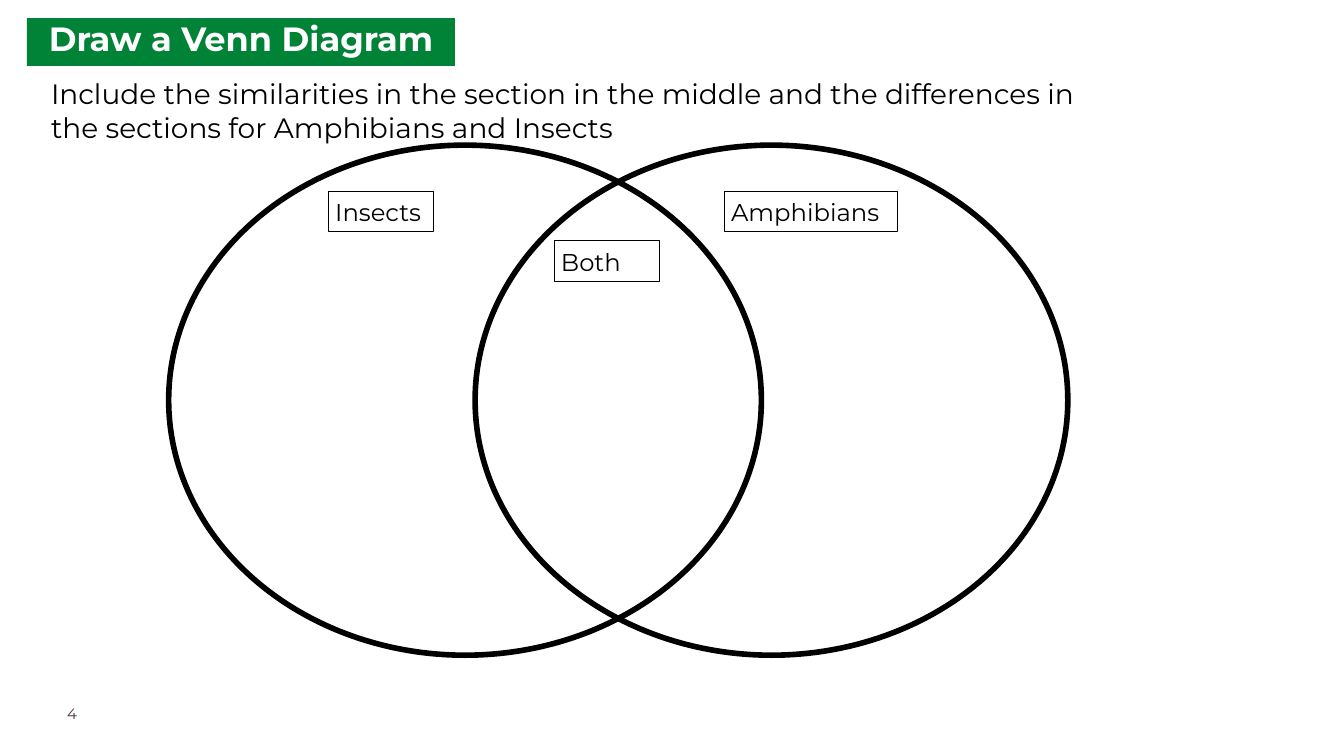
"""Build a Venn diagram worksheet slide comparing insects and amphibians."""
from lxml.etree import SubElement
from pptx import Presentation
from pptx.dml.color import RGBColor
from pptx.enum.shapes import MSO_SHAPE
from pptx.enum.text import MSO_ANCHOR, MSO_AUTO_SIZE, PP_ALIGN
from pptx.oxml.ns import qn
from pptx.util import Inches, Pt

COLORS = {"green": "008237", "white": "FFFFFF", "black": "000000", "plum": "4B3241"}

deck = Presentation()
deck.slide_width, deck.slide_height = Inches(20), Inches(11.25)
column = deck.slide_width / 20
row = deck.slide_height / 11.25


def place(item, left, top, width, height):
    item.left, item.width = int(left * column), int(width * column)
    item.top, item.height = int(top * row), int(height * row)
    return item


def write(item, text, size, color="black", bold=False, align=PP_ALIGN.LEFT, inset=0.1):
    frame = item.text_frame
    frame.word_wrap = True
    frame.auto_size = MSO_AUTO_SIZE.NONE
    frame.vertical_anchor = MSO_ANCHOR.TOP
    frame.margin_left = frame.margin_right = Inches(inset)
    frame.margin_top = frame.margin_bottom = Inches(inset)
    frame.text = text
    paragraph = frame.paragraphs[0]
    properties = paragraph._p.get_or_add_pPr()
    properties.set("marL", "0")
    properties.set("indent", "0")
    SubElement(properties, qn("a:buNone"))
    paragraph.alignment = align
    paragraph.space_before = Pt(0)
    font = paragraph.runs[0].font
    font.name, font.size, font.bold = "Montserrat", Pt(size), bold
    font.color.rgb = RGBColor.from_string(COLORS[color])


slide = deck.slides.add_slide(deck.slide_layouts[1])
heading, instructions = slide.placeholders

place(heading, 0.4, 0.27, 6.37, 0.71)
heading.fill.solid()
heading.fill.fore_color.rgb = RGBColor.from_string(COLORS["green"])
write(heading, "Draw a Venn Diagram", 36, color="white", bold=True,
      align=PP_ALIGN.CENTER, inset=0)

place(instructions, 0.66, 1.04, 16.06, 1.87)
write(instructions, "Include the similarities in the section in the middle and the "
      "differences in the sections for Amphibians and Insects", 30)

page_number = place(slide.shapes.add_textbox(0, 0, 0, 0), 1, 10.48, 1.57, 0.39)
write(page_number, "4", 16, color="plum", inset=0)

outlines = [
    (MSO_SHAPE.OVAL, "", 7.07, 2.16, 8.82, 7.59, 6),
    (MSO_SHAPE.OVAL, "", 2.51, 2.16, 8.82, 7.59, 6),
    (MSO_SHAPE.RECTANGLE, "Insects", 4.89, 2.84, 1.56, 0.61, 0.75),
    (MSO_SHAPE.RECTANGLE, "Amphibians", 10.78, 2.84, 2.58, 0.61, 0.75),
    (MSO_SHAPE.RECTANGLE, "Both", 8.25, 3.58, 1.56, 0.61, 0.75),
]
for kind, label, left, top, width, height, weight in outlines:
    region = place(slide.shapes.add_shape(kind, 0, 0, 0, 0), left, top, width, height)
    region.shadow.inherit = False
    region.fill.background()
    region.line.color.rgb = RGBColor.from_string(COLORS["black"])
    region.line.width = Pt(weight)
    if label:
        write(region, label, 26)

deck.save("out.pptx")
